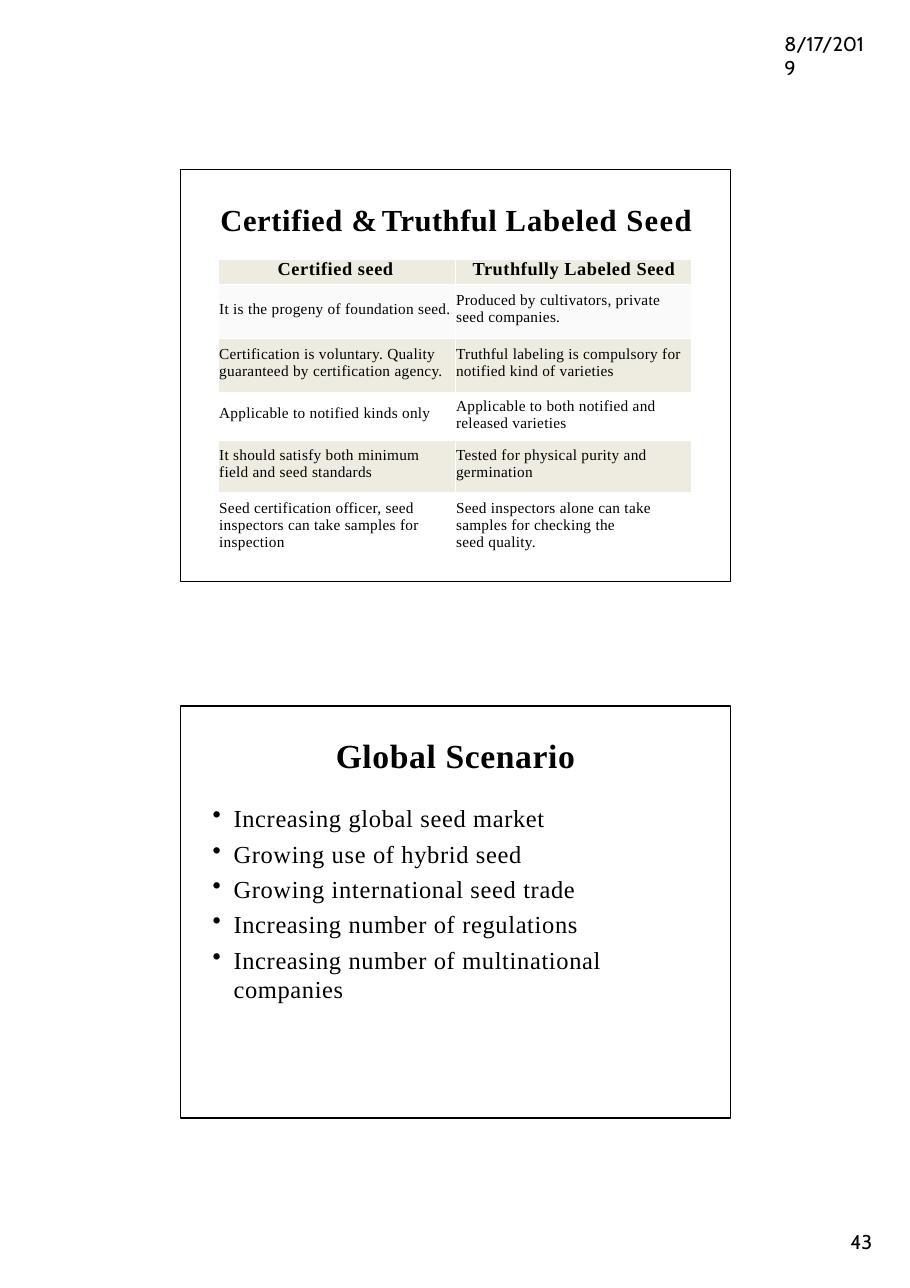
from lxml import etree
from pptx import Presentation
from pptx import util as u
from pptx.dml.color import RGBColor
from pptx.enum import shapes, text
from pptx.oxml.ns import qn

PX = 9144  # 100 px to the inch
BLACK = RGBColor(0x00, 0x00, 0x00)
CREAM = RGBColor(0xEE, 0xEC, 0xE1)
PALE = RGBColor(0xFA, 0xFA, 0xFA)
SERIF, SANS = "Times New Roman", "Cabin"

HEADS = ["Certified seed", "Truthfully Labeled Seed"]
# height, fill, top margins of both cells, texts of both cells
ROWS = [
    (49, PALE, (15, 7), ("It is the progeny of foundation seed.",
                         "Produced by cultivators, private\vseed companies.")),
    (49, CREAM, (7, 7), ("Certification is voluntary. Quality\vguaranteed by certification agency.",
                         "Truthful labeling is compulsory for\vnotified kind of varieties")),
    (44, None, (12, 5), ("Applicable to notified kinds only",
                         "Applicable to both notified and\vreleased varieties")),
    (47, CREAM, (6, 6), ("It should satisfy both minimum\vfield and seed standards",
                         "Tested for physical purity and\vgermination")),
    (65, None, (7, 7), ("Seed certification officer, seed\vinspectors can take samples for\vinspection",
                        "Seed inspectors alone can take\vsamples for checking the\vseed quality.")),
]
POINTS = [
    "Increasing global seed market",
    "Growing use of hybrid seed",
    "Growing international seed trade",
    "Increasing number of regulations",
    "Increasing number of multinational\vcompanies",
]


def px(n):
    return u.Emu(n * PX)


def style(para, size, face=SERIF, bold=False, track=0):
    """Set the font of a paragraph; track is in hundredths of a point."""
    font = para.font
    font.name, font.size, font.bold = face, u.Pt(size), bold
    font.color.rgb = BLACK
    for run in para.runs:
        run._r.get_or_add_rPr().set("spc", str(track))


def inset(item, left, top):
    item.margin_left, item.margin_top = px(left), px(top)
    item.margin_right = item.margin_bottom = 0


def label(slide, box, words, size, face=SERIF, bold=False, track=0, left=1, top=1):
    frame = slide.shapes.add_textbox(*map(px, box)).text_frame
    frame.word_wrap = True
    inset(frame, left, top)
    para = frame.paragraphs[0]
    para.text = words
    style(para, size, face, bold, track)
    return para


def panel(slide, box):
    rect = slide.shapes.add_shape(shapes.MSO_SHAPE.RECTANGLE, *map(px, box))
    rect.shadow.inherit = False
    rect.fill.background()
    rect.line.color.rgb = BLACK
    rect.line.width = u.Pt(0.96)
    return rect.text_frame


def edge(cell):
    """Give a cell white borders, placed ahead of its fill."""
    props = cell._tc.get_or_add_tcPr()
    for spot, (side, width) in enumerate(
            [("lnL", 0.75), ("lnR", 0.75), ("lnT", 0.5), ("lnB", 0.5)]):
        line = etree.Element(qn("a:" + side), w=str(u.Pt(width)))
        fill = etree.SubElement(line, qn("a:solidFill"))
        etree.SubElement(fill, qn("a:srgbClr"), val="FFFFFF")
        props.insert(spot, line)


def fill_cell(cell, words, tint, left, top, size, bold=False, track=20):
    inset(cell, left, top)
    if tint is None:
        cell.fill.background()
    else:
        cell.fill.solid()
        cell.fill.fore_color.rgb = tint
    para = cell.text_frame.paragraphs[0]
    para.text = words
    style(para, size, SERIF, bold, track)
    edge(cell)


def seed_table(slide, box):
    grid = slide.shapes.add_table(len(ROWS) + 1, 2, *map(px, box)).table
    grid.first_row = grid.horz_banding = False
    for col in grid.columns:
        col.width = px(box[2] // 2)
    grid.rows[0].height = px(23)
    for c, (head, left) in enumerate(zip(HEADS, (54, 16))):
        fill_cell(grid.cell(0, c), head, CREAM, left, 0, 12, True, 37)
    for r, (tall, tint, tops, words) in enumerate(ROWS, 1):
        grid.rows[r].height = px(tall)
        for c in range(2):
            fill_cell(grid.cell(r, c), words[c], tint, 1, tops[c], 10)


def seed_panel(slide, box):
    x, y, wide, tall = box
    title = label(slide, (x + 35, y + 27, 440, 36),
                  "Certified & Truthful Labeled Seed", 20, bold=True)
    title.text = ""
    for words, track in [("Certified ", 40), ("& ", -190), ("Truthful ", 30),
                         ("Labeled ", 60), ("Seed", 90)]:
        run = title.add_run()
        run.text = words
        run._r.get_or_add_rPr().set("spc", str(track))
    seed_table(slide, (x + 34, y + 81, 430, 277))
    panel(slide, box)


def bullet(para):
    props = para._p.get_or_add_pPr()
    props.set("marL", str(px(48)))
    props.set("indent", str(px(-19)))
    etree.SubElement(props, qn("a:buChar"), char="•")


def global_panel(slide, box):
    frame = panel(slide, box)
    frame.word_wrap = True
    frame.vertical_anchor = text.MSO_ANCHOR.TOP
    inset(frame, 0, 26)
    title = frame.paragraphs[0]
    title.text = "Global Scenario"
    title.alignment = text.PP_ALIGN.CENTER
    style(title, 22, bold=True, track=42)
    for i, point in enumerate(POINTS):
        para = frame.add_paragraph()
        para.text = point
        para.alignment = text.PP_ALIGN.LEFT
        para.space_before = u.Pt(3.9 if i else 18.4)
        bullet(para)
        style(para, 16, track=45)


def main():
    deck = Presentation()
    deck.slide_width, deck.slide_height = px(826), px(1169)
    slide = deck.slides.add_slide(deck.slide_layouts[6])
    label(slide, (711, 28, 81, 24), "8/17/2019", 13, SANS, track=-10)
    seed_panel(slide, (164, 154, 499, 374))
    global_panel(slide, (164, 641, 499, 374))
    page = label(slide, (768, 1119, 27, 21), "43", 13, SANS, track=-10, left=4, top=0)
    page.line_spacing = u.Pt(13.3)
    deck.save("out.pptx")


if __name__ == "__main__":
    main()
